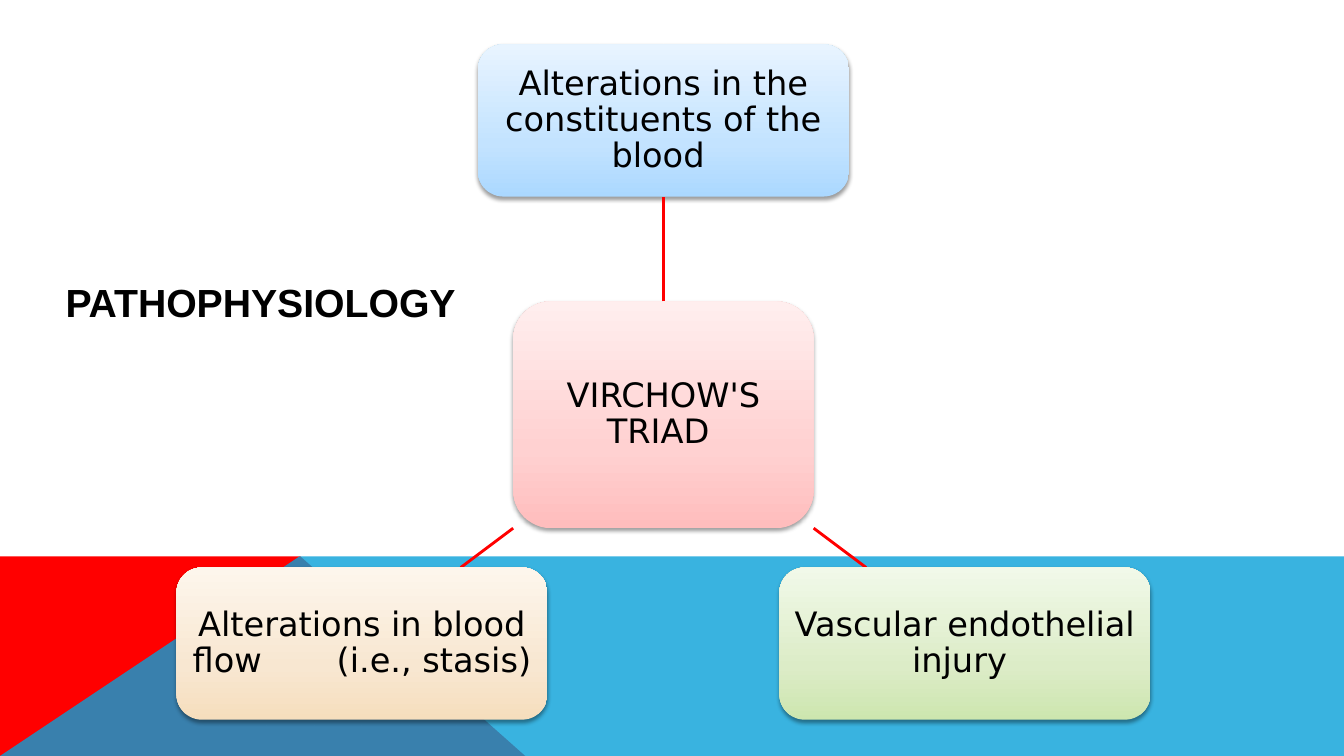
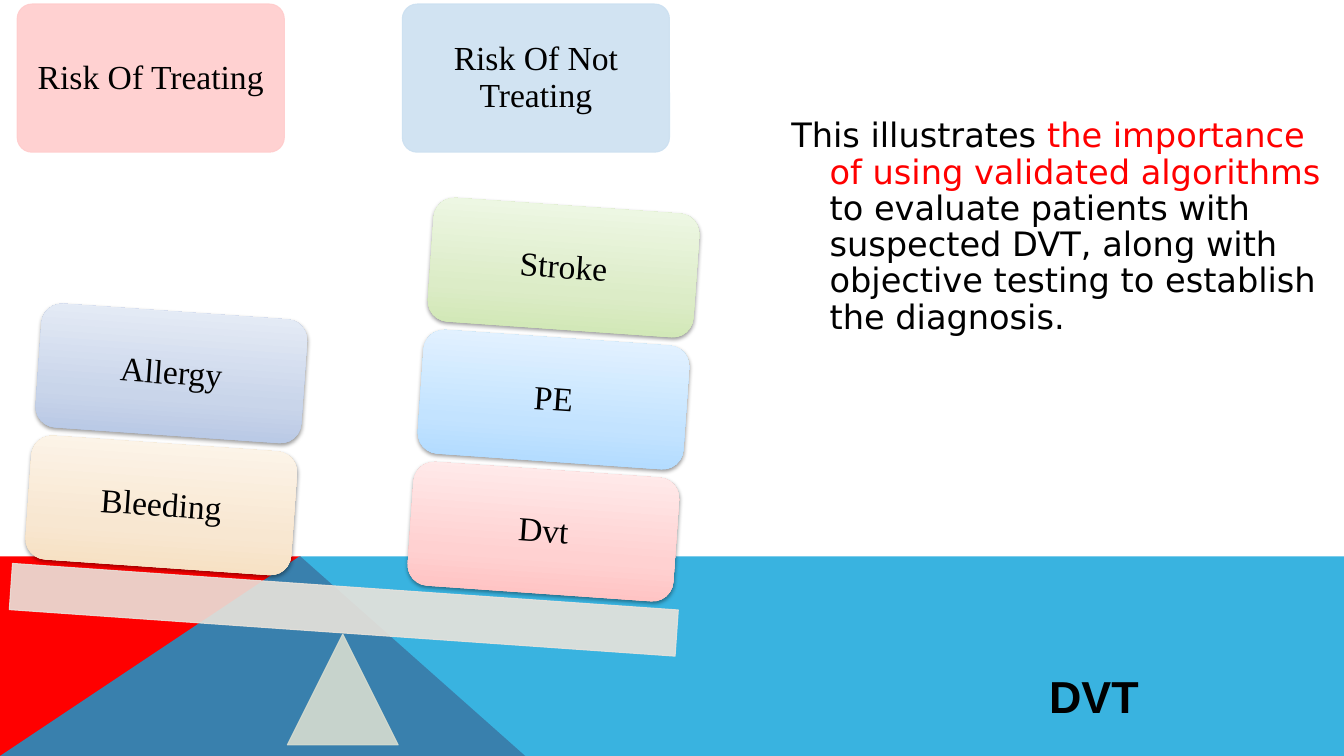
from copy import deepcopy

from lxml import etree
from pptx import Presentation
from pptx.dml.color import RGBColor
from pptx.enum import shapes as kinds, text as txt
from pptx.oxml.ns import qn
from pptx.util import Inches, Pt

COLORS = {
    "black": "000000", "red": "FF0000", "band": "08A1D9",
    "treating": "FFCCCC", "not_treating": "CCE0F1",
    "fulcrum": "D7DDD0", "beam": "E9E3DB",
}
GRADIENTS = {  # bottom, 35 % up, top
    "pink": ("FFBDBD", "FFD1D1", "FFEEEE"),
    "blue": ("ABD8FF", "C3E3FF", "E8F4FF"),
    "green": ("CDE6AF", "DCECC7", "F1F9E9"),
    "sand": ("F6DEBD", "F8E7D1", "FDF6EC"),
    "slate": ("B2C3E3", "C9D5EA", "EAEFF8"),
}
TITLE_FONT, BODY_FONT, SCALE_FONT = "Arial", "DejaVu Sans", "Times New Roman"
SHAPE = kinds.MSO_SHAPE
TILT = 4


def rgb(name):
    return RGBColor.from_string(COLORS[name])


def add_run(paragraph, words, font, size=24, color="black", bold=False):
    run = paragraph.add_run()
    run.text = words
    run.font.name = font
    run.font.size = Pt(size)
    run.font.bold = bold
    run.font.color.rgb = rgb(color)
    return run


def set_alpha(fill_parent, percent):
    color = fill_parent.find(qn("a:solidFill")).find(qn("a:srgbClr"))
    etree.SubElement(color, qn("a:alpha"), val=str(percent * 1000))


def add_plain(slide, kind, box, color):
    """Flat, slightly see-through shape with an outline of its own colour."""
    shape = slide.shapes.add_shape(kind, *map(Inches, box))
    shape.shadow.inherit = False
    shape.fill.solid()
    shape.fill.fore_color.rgb = rgb(color)
    shape.line.color.rgb = rgb(color)
    shape.line.width = Pt(0.75)
    set_alpha(shape.element.spPr, 90)
    set_alpha(shape.element.spPr.find(qn("a:ln")), 90)
    return shape


def add_card(slide, box, gradient):
    """Rounded box with a vertical gradient and a soft shadow below it."""
    card = slide.shapes.add_shape(SHAPE.ROUNDED_RECTANGLE, *map(Inches, box))
    card.fill.gradient()
    card.fill.gradient_angle = 90
    stop_list = card.element.spPr.find(".//" + qn("a:gsLst"))
    stop_list.insert(1, deepcopy(stop_list[0]))
    for stop, position, color in zip(card.fill.gradient_stops, (0, 0.35, 1),
                                     GRADIENTS[gradient]):
        stop.position = position
        stop.color.rgb = RGBColor.from_string(color)
    card.line.fill.background()
    card.shadow.inherit = False
    shadow = etree.SubElement(
        card.element.spPr.find(qn("a:effectLst")), qn("a:outerShdw"),
        blurRad=str(Pt(3.1)), dist=str(Pt(1.6)), dir="5400000", rotWithShape="0")
    shade = etree.SubElement(shadow, qn("a:srgbClr"), val=COLORS["black"])
    etree.SubElement(shade, qn("a:alpha"), val="38000")
    return card


def label(shape, words, font, inset):
    """Centre a caption in a shape and return its paragraph."""
    frame = shape.text_frame
    frame.word_wrap = True
    frame.vertical_anchor = txt.MSO_ANCHOR.MIDDLE
    frame.margin_left = frame.margin_right = Inches(inset)
    frame.margin_top = frame.margin_bottom = Inches(inset)
    caption = frame.paragraphs[0]
    caption.alignment = txt.PP_ALIGN.CENTER
    caption.line_spacing = 0.9
    add_run(caption, words, font)
    return caption


def add_band(slide, points, color, alpha=100):
    (x, y), *rest = [(Inches(px), Inches(py)) for px, py in points]
    outline = slide.shapes.build_freeform(x, y)
    outline.add_line_segments(rest, close=True)
    band = outline.convert_to_shape()
    band.shadow.inherit = False
    band.fill.solid()
    band.fill.fore_color.rgb = rgb(color)
    band.line.fill.background()
    set_alpha(band.element.spPr, alpha)


def add_slide(deck):
    """Blank slide with the coloured bands along its foot."""
    slide = deck.slides.add_slide(deck.slide_layouts[6])
    top, bottom, right = 5.52, 7.5, 13.33
    add_band(slide, [(0, bottom), (0, top), (2.98, top), (5.21, bottom)], "red")
    add_band(slide, [(0, bottom), (2.97, top), (right, top), (right, bottom)],
             "band", 80)
    return slide


def add_title(slide, words, box, size):
    frame = slide.shapes.add_textbox(*map(Inches, box)).text_frame
    frame.word_wrap = True
    frame.vertical_anchor = txt.MSO_ANCHOR.MIDDLE
    title = frame.paragraphs[0]
    title.alignment = txt.PP_ALIGN.CENTER
    add_run(title, words, TITLE_FONT, size, bold=True)


def add_link(slide, start=(0, 0), end=(0, 0)):
    link = slide.shapes.add_connector(
        kinds.MSO_CONNECTOR.STRAIGHT, *map(Inches, (*start, *end)))
    link.line.color.rgb = rgb("red")
    link.line.width = Pt(2)
    etree.SubElement(link.element.spPr, qn("a:effectLst"))
    return link


def add_triad(slide, left, top):
    width, height, inset = 3.68, 1.51, 0.07
    hub_width, hub_height = 2.98, 2.25
    middle = left + 4.83
    hub_left, hub_top = middle - hub_width / 2, top + 2.55
    hub_bottom, factor_top = hub_top + hub_height, top + 5.19

    hub = add_card(slide, (hub_left, hub_top, hub_width, hub_height), "pink")
    label(hub, "VIRCHOW'S TRIAD\u00a0".replace("\u00a0", " "), BODY_FONT, inset)
    blood = add_card(slide, (middle - width / 2, top, width, height), "blue")
    label(blood, "Alterations in the constituents of the blood ", BODY_FONT, inset)
    stem = add_link(slide)
    stem.begin_connect(hub, 0)
    stem.end_connect(blood, 2)

    for side in (-1, 1):
        corner = middle + side * hub_width / 2
        add_link(slide, (corner, hub_bottom), (corner + side * 0.52, factor_top))
    injury = add_card(slide, (middle + 1.15, factor_top, width, height), "green")
    label(injury, "Vascular endothelial injury ", BODY_FONT, inset)
    stasis = add_card(slide, (left, factor_top, width, height), "sand")
    caption = label(stasis, "Alterations in blood flow", BODY_FONT, inset)
    gap = add_run(caption, " ", BODY_FONT)
    gap.font._element.set("spc", "4580")  # widens the single space
    add_run(caption, "(i.e., stasis) ", BODY_FONT)


def add_balance(slide, left, top):
    """Two headed stacks of risks on a tilted beam."""
    sides = [
        (0.07, "Risk Of Treating", "treating", 0.18, 4.36,
         [("Bleeding", "sand"), ("Allergy", "slate")]),
        (3.89, "Risk Of Not Treating", "not_treating", 3.97, 4.62,
         [("Dvt", "pink"), ("PE", "blue"), ("Stroke", "green")]),
    ]
    for head_x, heading, color, *_ in sides:
        head = add_plain(slide, SHAPE.ROUNDED_RECTANGLE,
                         (left + head_x, top, 2.65, 1.47), color)
        head.adjustments[0] = 0.1
        label(head, heading, SCALE_FONT, 0.1)

    add_plain(slide, SHAPE.ISOSCELES_TRIANGLE,
              (left + 2.75, top + 6.25, 1.1, 1.1), "fulcrum")
    beam = add_plain(slide, SHAPE.RECTANGLE, (left, top + 5.78, 6.62, 0.46), "beam")
    beam.rotation = TILT

    for *_, stack_x, stack_y, risks in sides:
        for level, (risk, gradient) in enumerate(risks):
            weight = add_card(slide, (left + stack_x + 0.1 * level,
                                      top + stack_y - 1.31 * level, 2.64, 1.23),
                              gradient)
            weight.rotation = TILT
            label(weight, risk, SCALE_FONT, 0.1)


def add_message(slide, box):
    frame = slide.shapes.add_textbox(*map(Inches, box)).text_frame
    frame.word_wrap = True
    message = frame.paragraphs[0]
    message.line_spacing = 0.9
    message.space_before = Pt(8)
    hanging = message._p.get_or_add_pPr()
    hanging.set("marL", str(Inches(0.38)))
    hanging.set("indent", str(-Inches(0.38)))
    for words, color in [
        ("This illustrates ", "black"),
        ("the importance of using validated algorithms ", "red"),
        ("to evaluate patients with suspected DVT, along with objective "
         "testing to establish the diagnosis.", "black"),
    ]:
        add_run(message, words, BODY_FONT, color=color)


def main():
    deck = Presentation()
    deck.slide_width, deck.slide_height = Inches(13.33), Inches(7.5)

    pathophysiology = add_slide(deck)
    add_title(pathophysiology, "PATHOPHYSIOLOGY", (0.1, 2.69, 4.97, 0.6), 28)
    add_triad(pathophysiology, 1.75, 0.44)

    dvt = add_slide(deck)
    add_title(dvt, "DVT", (8.4, 6.6, 4.9, 0.6), 32)
    add_message(dvt, (7.75, 1.13, 5.58, 3.91))
    add_balance(dvt, 0.1, 0.04)

    deck.save("out.pptx")


if __name__ == "__main__":
    main()
